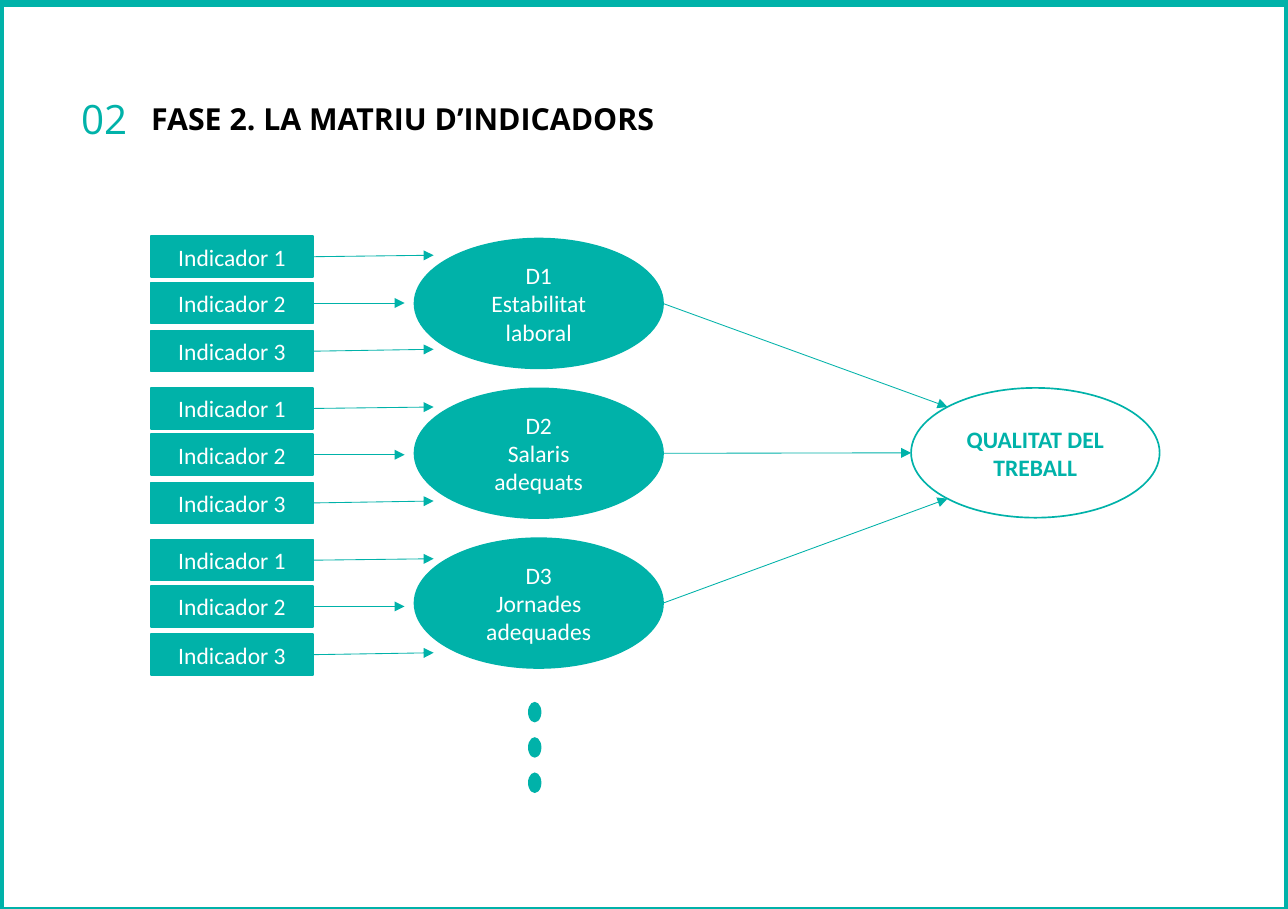
from math import cos, radians, sin

from lxml.etree import SubElement
from pptx import Presentation
from pptx.dml.color import RGBColor
from pptx.enum.shapes import MSO_CONNECTOR, MSO_SHAPE
from pptx.enum.text import MSO_ANCHOR, MSO_AUTO_SIZE, PP_ALIGN
from pptx.oxml.ns import qn
from pptx.util import Cm, Pt

COLORS = {"teal": "00B2A9", "white": "FFFFFF", "black": "000000"}
NUMBER = "02"
TITLE = "FASE 2. LA MATRIU D’INDICADORS"
GOAL = "QUALITAT DEL TREBALL"
INDICATORS = ["Indicador 1", "Indicador 2", "Indicador 3"]
# Each dimension: its lines, then the angle at which its arrow meets the goal
DIMENSIONS = [
    (["D1", "Estabilitat laboral"], 225),
    (["D2", "Salaris adequats"], 180),
    (["D3", "Jornades adequades"], 135),
]

# All lengths below are in centimetres
PAGE_W, PAGE_H = 27, 19.05
OVAL_LEFT, OVAL_TOP, OVAL_W, OVAL_H, OVAL_PITCH = 8.69, 5.0, 5.21, 2.72, 3.14
GOAL_LEFT, GOAL_TOP = 19.1, 8.13
BOX_LEFT, BOX_TOP, BOX_W, BOX_H, GROUP_PITCH = 3.17, 4.95, 3.39, 0.86, 3.18
BOX_OFFSETS = [0, 0.97, 1.98]
BOX_TIPS = [(9.09, -0.03), (8.48, 0), (9.09, -0.04)]  # x, rise from box middle
DOT_LEFT, DOT_TOP, DOT_W, DOT_H, DOT_PITCH = 11.07, 14.71, 0.28, 0.43, 0.74


def color(name):
    return RGBColor.from_string(COLORS[name])


def write(shape, lines, size=14, font="Calibri", ink="white", bold=False,
          align=PP_ALIGN.CENTER, inset=None):
    frame = shape.text_frame
    frame.word_wrap = True
    frame.auto_size = MSO_AUTO_SIZE.NONE
    frame.vertical_anchor = MSO_ANCHOR.MIDDLE
    if inset is not None:
        frame.margin_left = frame.margin_right = Cm(inset)
        frame.margin_top = frame.margin_bottom = Cm(inset)
    for i, line in enumerate(lines):
        para = frame.paragraphs[0] if i == 0 else frame.add_paragraph()
        para.alignment = align
        span = para.add_run()
        span.text = line
        span.font.size, span.font.name, span.font.bold = Pt(size), font, bold
        span.font.color.rgb = color(ink)


def add_figure(page, kind, left, top, width, height, fill="teal", line=1):
    shape = page.shapes.add_shape(kind, Cm(left), Cm(top), Cm(width), Cm(height))
    shape.shadow.inherit = False
    if fill:
        shape.fill.solid()
        shape.fill.fore_color.rgb = color(fill)
    else:
        shape.fill.background()
    if line:
        shape.line.color.rgb = color("teal")
        shape.line.width = Pt(line)
    else:
        shape.line.fill.background()
    return shape


def add_arrow(page, start, tip):
    arrow = page.shapes.add_connector(
        MSO_CONNECTOR.STRAIGHT, *(Cm(value) for value in (*start, *tip)))
    arrow.line.color.rgb = color("teal")
    arrow.line.width = Pt(0.5)
    SubElement(arrow.line._get_or_add_ln(), qn("a:tailEnd"), type="triangle")
    SubElement(arrow._element.spPr, qn("a:effectLst"))
    return arrow


def goal_edge(angle):
    """Point on the goal oval's outline, in degrees clockwise from its right end."""
    return (GOAL_LEFT + OVAL_W / 2 * (1 + cos(radians(angle))),
            GOAL_TOP + OVAL_H / 2 * (1 + sin(radians(angle))))


def add_heading(page):
    title = page.shapes.title
    title.left, title.top, title.width, title.height = Cm(3.17), Cm(1.52), Cm(13.18), Cm(1.94)
    heading = {"font": "Open Sans", "align": PP_ALIGN.LEFT, "inset": 0}
    write(title, [TITLE], size=18, ink="black", bold=True, **heading)
    number = page.shapes.add_textbox(Cm(1.7), Cm(1.98), Cm(1.22), Cm(1))
    write(number, [NUMBER], size=24, ink="teal", **heading)


def add_indicators(page, group):
    for name, offset, (tip_x, rise) in zip(INDICATORS, BOX_OFFSETS, BOX_TIPS):
        top = BOX_TOP + group * GROUP_PITCH + offset
        middle = top + BOX_H / 2
        box = add_figure(page, MSO_SHAPE.RECTANGLE, BOX_LEFT, top, BOX_W, BOX_H)
        write(box, [name])
        arrow = add_arrow(page, (BOX_LEFT + BOX_W, middle), (tip_x, middle + rise))
        arrow.begin_connect(box, 3)


def main():
    deck = Presentation()
    deck.slide_width, deck.slide_height = Cm(PAGE_W), Cm(PAGE_H)
    page = deck.slides.add_slide(deck.slide_layouts[5])
    add_heading(page)
    add_figure(page, MSO_SHAPE.RECTANGLE, 0, 0.05, PAGE_W, PAGE_H, fill=None, line=5)

    for i, (lines, angle) in enumerate(DIMENSIONS):
        top = OVAL_TOP + i * OVAL_PITCH
        oval = add_figure(page, MSO_SHAPE.OVAL, OVAL_LEFT, top, OVAL_W, OVAL_H)
        write(oval, lines)
        add_arrow(page, (OVAL_LEFT + OVAL_W, top + OVAL_H / 2), goal_edge(angle))
        add_indicators(page, i)
        add_figure(page, MSO_SHAPE.OVAL, DOT_LEFT, DOT_TOP + i * DOT_PITCH,
                   DOT_W, DOT_H, line=None)

    goal = add_figure(page, MSO_SHAPE.OVAL, GOAL_LEFT, GOAL_TOP, OVAL_W, OVAL_H, fill=None)
    write(goal, [GOAL], ink="teal", bold=True)
    deck.save("out.pptx")


if __name__ == "__main__":
    main()
